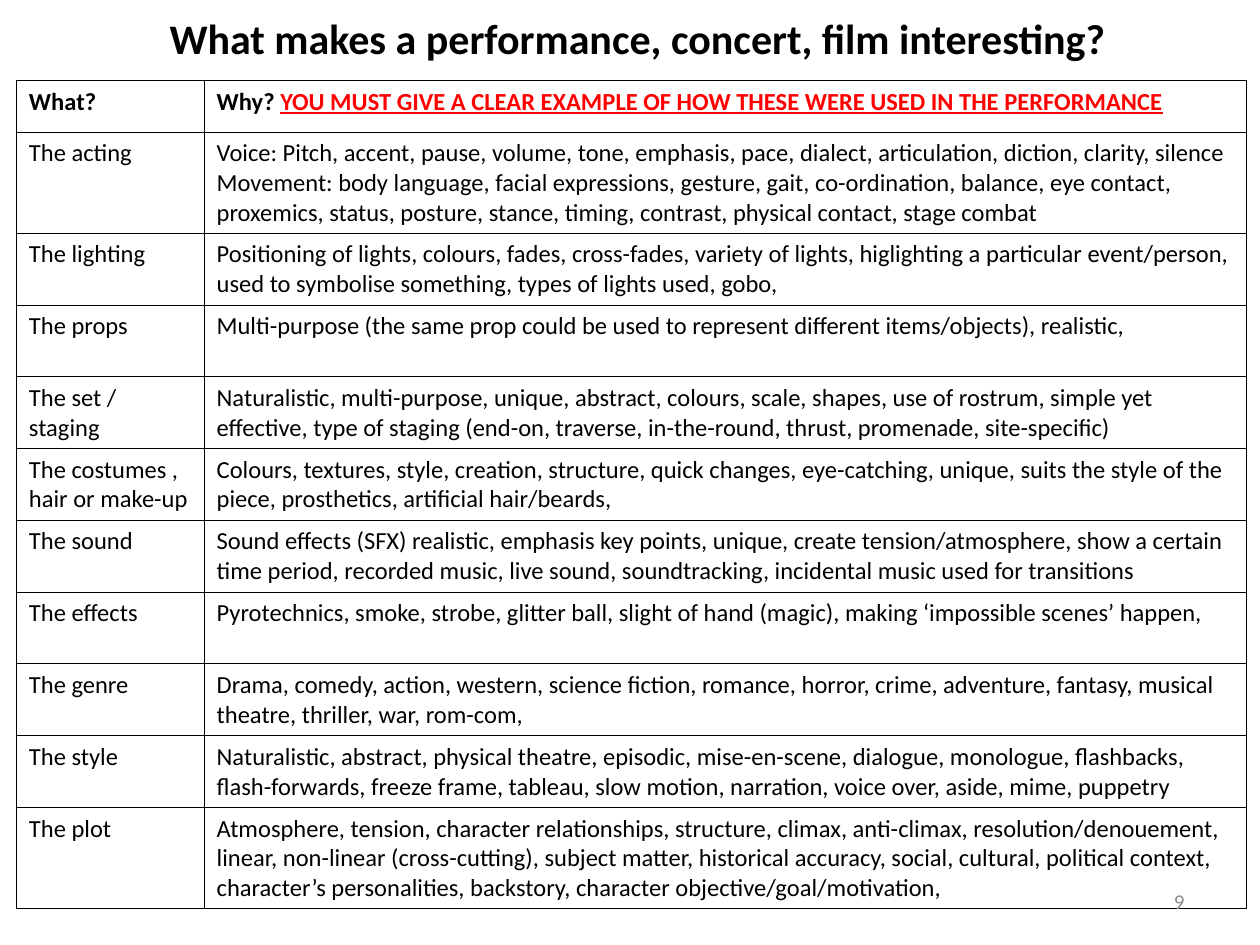
from lxml.etree import SubElement
from pptx import Presentation
from pptx.dml.color import RGBColor
from pptx.enum.text import MSO_ANCHOR, PP_ALIGN
from pptx.oxml.ns import qn
from pptx.util import Inches, Pt

FONT = "Calibri"
BLACK, WHITE, RED, GREY = "000000", "FFFFFF", "FF0000", "8C8C8C"
COLUMN_WIDTHS = (1.49, 8.27)
HEADER_HEIGHT, TWO_LINE_HEIGHT, THREE_LINE_HEIGHT = 0.41, 0.57, 0.8
TALL_TOPICS = ("The acting", "The plot")
INSTRUCTION = "YOU MUST GIVE A CLEAR EXAMPLE OF HOW THESE WERE USED IN THE PERFORMANCE"

# Topic, then one entry for each paragraph of its features.
TOPICS = [
    ("The acting",
     "Voice: Pitch, accent, pause, volume, tone, emphasis, pace, dialect, articulation, diction, clarity, silence",
     "Movement: body language, facial expressions, gesture, gait, co-ordination, balance, eye contact, "
     "proxemics, status, posture, stance, timing, contrast, physical contact, stage combat"),
    ("The lighting",
     "Positioning of lights, colours, fades, cross-fades, variety of lights, higlighting a particular "
     "event/person, used to symbolise something, types of lights used, gobo,"),
    ("The props",
     "Multi-purpose (the same prop could be used to represent different items/objects), realistic,"),
    ("The set / staging",
     "Naturalistic, multi-purpose, unique, abstract, colours, scale, shapes, use of rostrum, simple yet "
     "effective, type of staging (end-on, traverse, in-the-round, thrust, promenade, site-specific)"),
    ("The costumes , hair or make-up",
     "Colours, textures, style, creation, structure, quick changes, eye-catching, unique, suits the style "
     "of the piece, prosthetics, artificial hair/beards,"),
    ("The sound",
     "Sound effects (SFX) realistic, emphasis key points, unique, create tension/atmosphere, show a certain "
     "time period, recorded music, live sound, soundtracking, incidental music used for transitions"),
    ("The effects",
     "Pyrotechnics, smoke, strobe, glitter ball, slight of hand (magic), making ‘impossible scenes’ happen,"),
    ("The genre",
     "Drama, comedy, action, western, science fiction, romance, horror, crime, adventure, fantasy, musical "
     "theatre, thriller, war, rom-com,"),
    ("The style",
     "Naturalistic, abstract, physical theatre, episodic, mise-en-scene, dialogue, monologue, flashbacks, "
     "flash-forwards, freeze frame, tableau, slow motion, narration, voice over, aside, mime, puppetry"),
    ("The plot",
     "Atmosphere, tension, character relationships, structure, climax, anti-climax, resolution/denouement, "
     "linear, non-linear (cross-cutting), subject matter, historical accuracy, social, cultural, political "
     "context, character’s personalities, backstory, character objective/goal/motivation,"),
]


def set_font(font, size, color=BLACK, bold=False):
    font.name = FONT
    font.size = Pt(size)
    font.bold = bold
    font.color.rgb = RGBColor.from_string(color)


def add_text(slide, box, text, size, align, color=BLACK, bold=False, anchor=MSO_ANCHOR.TOP):
    shape = slide.shapes.add_textbox(*map(Inches, box))
    frame = shape.text_frame
    frame.word_wrap = True
    frame.vertical_anchor = anchor
    paragraph = frame.paragraphs[0]
    paragraph.text = text
    paragraph.alignment = align
    set_font(paragraph.font, size, color, bold)


def add_borders(cell):
    """Draw the four cell borders; they must precede the fill in the XML."""
    properties = cell._tc.get_or_add_tcPr()
    for side in ("a:lnL", "a:lnR", "a:lnT", "a:lnB"):
        line = SubElement(properties, qn(side), w=str(Pt(0.5)))
        fill = SubElement(line, qn("a:solidFill"))
        SubElement(fill, qn("a:srgbClr"), val=BLACK)


def fill_cell(cell, paragraphs, bold=False):
    add_borders(cell)
    cell.fill.solid()
    cell.fill.fore_color.rgb = RGBColor.from_string(WHITE)
    cell.text = "\n".join(paragraphs)
    for paragraph in cell.text_frame.paragraphs:
        set_font(paragraph.font, 14, bold=bold)


def add_topic_table(slide):
    heights = [HEADER_HEIGHT] + [
        THREE_LINE_HEIGHT if topic in TALL_TOPICS else TWO_LINE_HEIGHT for topic, *_ in TOPICS
    ]
    table = slide.shapes.add_table(
        len(heights), len(COLUMN_WIDTHS), Inches(0.13), Inches(0.64),
        Inches(sum(COLUMN_WIDTHS)), Inches(sum(heights)),
    ).table
    for column, width in zip(table.columns, COLUMN_WIDTHS):
        column.width = Inches(width)
    for row, height in zip(table.rows, heights):
        row.height = Inches(height)

    for index, (topic, *features) in enumerate([("What?", "Why? "), *TOPICS]):
        fill_cell(table.cell(index, 0), [topic], bold=index == 0)
        fill_cell(table.cell(index, 1), features, bold=index == 0)

    instruction = table.cell(0, 1).text_frame.paragraphs[0].add_run()
    instruction.text = INSTRUCTION
    instruction.font.underline = True
    instruction.font.color.rgb = RGBColor.from_string(RED)


def main():
    presentation = Presentation()
    presentation.slide_width = Inches(10)
    presentation.slide_height = Inches(7.5)
    slide = presentation.slides.add_slide(presentation.slide_layouts[6])
    add_text(slide, (0.12, 0.05, 9.88, 0.5), "What makes a performance, concert, film interesting?",
             24, PP_ALIGN.CENTER, bold=True)
    add_topic_table(slide)
    add_text(slide, (7.17, 6.95, 2.33, 0.4), "9", 12, PP_ALIGN.RIGHT, GREY, anchor=MSO_ANCHOR.MIDDLE)
    presentation.save("out.pptx")


if __name__ == "__main__":
    main()
